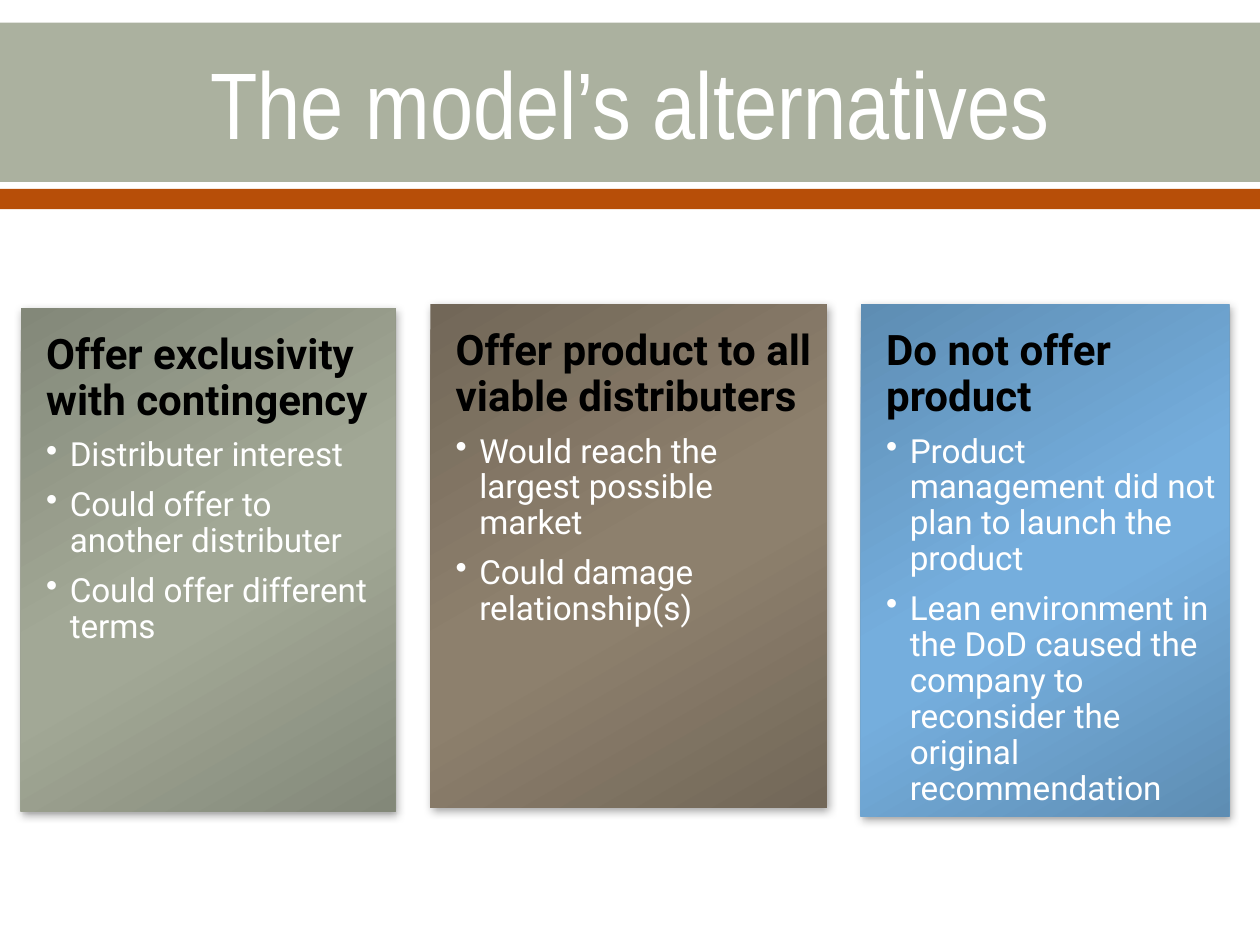
from dataclasses import dataclass
from pptx import Presentation
from pptx.dml.color import RGBColor as Color
from pptx.enum.shapes import MSO_SHAPE as Kind
from pptx.enum.text import MSO_ANCHOR as Anchor, PP_ALIGN as Align
from pptx.oxml import parse_xml as parse
from pptx.util import Pt

NS = 'xmlns:a="http://schemas.openxmlformats.org/drawingml/2006/main"'


@dataclass(frozen=True)
class Theme:
    """Hold the colours, fonts and type sizes."""
    band: str = "ABB19F"
    rule: str = "B74E08"
    light: str = "FFFFFF"
    dark: str = "000000"
    sage: tuple = ("838879", "A2A896")
    brown: tuple = ("726758", "8D806D")
    blue: tuple = ("5E8DB3", "75AEDD")
    face: str = "Arial Narrow"
    body: str = "Roboto"
    title: float = 54
    head: float = 24
    item: float = 19


class Deck:
    """Draw styled elements on the current slide."""

    def __init__(self, theme):
        """Open a deck with one blank slide."""
        self.theme = theme
        self.file = Presentation()
        self.file.slide_width, self.file.slide_height = Pt(720), Pt(540)
        self.slide = self.file.slides.add_slide(self.file.slide_layouts[6])

    def rect(self, box):
        """Add a rectangle without line or shadow."""
        shape = self.slide.shapes.add_shape(Kind.RECTANGLE, *map(Pt, box))
        shape.line.fill.background()
        shape.shadow.inherit = False
        return shape

    def bar(self, box, hue):
        """Add a bar of one colour."""
        fill = self.rect(box).fill
        fill.solid()
        fill.fore_color.rgb = Color.from_string(hue)

    def panel(self, box, hues):
        """Add a panel with a slanted gradient and a soft shadow."""
        edge, mid = hues
        stops = "".join(
            f'<a:gs pos="{pos * 1000}"><a:srgbClr val="{hue}"/></a:gs>'
            for pos, hue in ((0, edge), (48, mid), (58, mid), (100, edge)))
        props = self.rect(box)._element.spPr
        props.find("{*}prstGeom").addnext(parse(
            f'<a:gradFill {NS} rotWithShape="1"><a:gsLst>{stops}</a:gsLst>'
            '<a:lin ang="3600000" scaled="0"/></a:gradFill>'))
        props.find("{*}effectLst").append(parse(
            f'<a:outerShdw {NS} blurRad="{Pt(5)}" dist="{Pt(2)}" dir="3600000"'
            ' rotWithShape="0"><a:srgbClr val="000000"><a:alpha val="36000"/>'
            '</a:srgbClr></a:outerShdw>'))

    def frame(self, box):
        """Add a wrapping text box and return its frame."""
        frame = self.slide.shapes.add_textbox(*map(Pt, box)).text_frame
        frame.word_wrap = True
        return frame

    def style(self, para, text, face, size, hue, bold=False):
        """Fill a paragraph and set its font."""
        para.text = text
        font = para.font
        font.name, font.size, font.bold = face, Pt(size), bold
        font.color.rgb = Color.from_string(hue)

    def title(self, box, text):
        """Add the centred slide title."""
        look = self.theme
        frame = self.frame(box)
        frame.vertical_anchor = Anchor.MIDDLE
        para = frame.paragraphs[0]
        para.alignment = Align.CENTER
        self.style(para, text, look.face, look.title, look.light)

    def card(self, box, hues, head, items):
        """Add a panel with a heading and a bullet list."""
        look = self.theme
        self.panel(box, hues)
        frame = self.frame(box)
        frame.margin_left = frame.margin_top = Pt(14.4)
        frame.margin_right = frame.margin_bottom = Pt(7.2)
        self.style(frame.paragraphs[0], head, look.body, look.head, look.dark, True)
        for item in items:
            para = frame.add_paragraph()
            para.level = 1
            self.style(para, item, look.body, look.item, look.light)
            props = para._p.get_or_add_pPr()
            props.set("marL", str(Pt(13.5)))
            props.set("indent", str(-Pt(13.5)))
            props.insert(0, parse(f'<a:buChar {NS} char="•"/>'))
        for para in frame.paragraphs:
            para.line_spacing = 0.9
            para.space_after = Pt(8)

    def save(self):
        """Write the deck."""
        self.file.save("out.pptx")


def main():
    """Build the slide of alternatives."""
    look = Theme()
    deck = Deck(look)
    deck.bar((0, 13, 720, 91), look.band)
    deck.bar((0, 108, 720, 11.5), look.rule)
    deck.title((36, 14.4, 648, 88), "The model’s alternatives")
    cards = (
        ((12, 176.2, 214, 287.5), look.sage, "Offer exclusivity with contingency",
         ("Distributer interest", "Could offer to another distributer",
          "Could offer different terms")),
        ((246, 174, 226.4, 287.5), look.brown,
         "Offer product to all viable distributers",
         ("Would reach the largest possible market",
          "Could damage relationship(s)")),
        ((492, 174, 210.4, 292.5), look.blue, "Do not offer product",
         ("Product management did not plan to launch the product",
          "Lean environment in the DoD caused the company to reconsider "
          "the original recommendation")),
    )
    for card in cards:
        deck.card(*card)
    deck.save()


if __name__ == "__main__":
    main()
